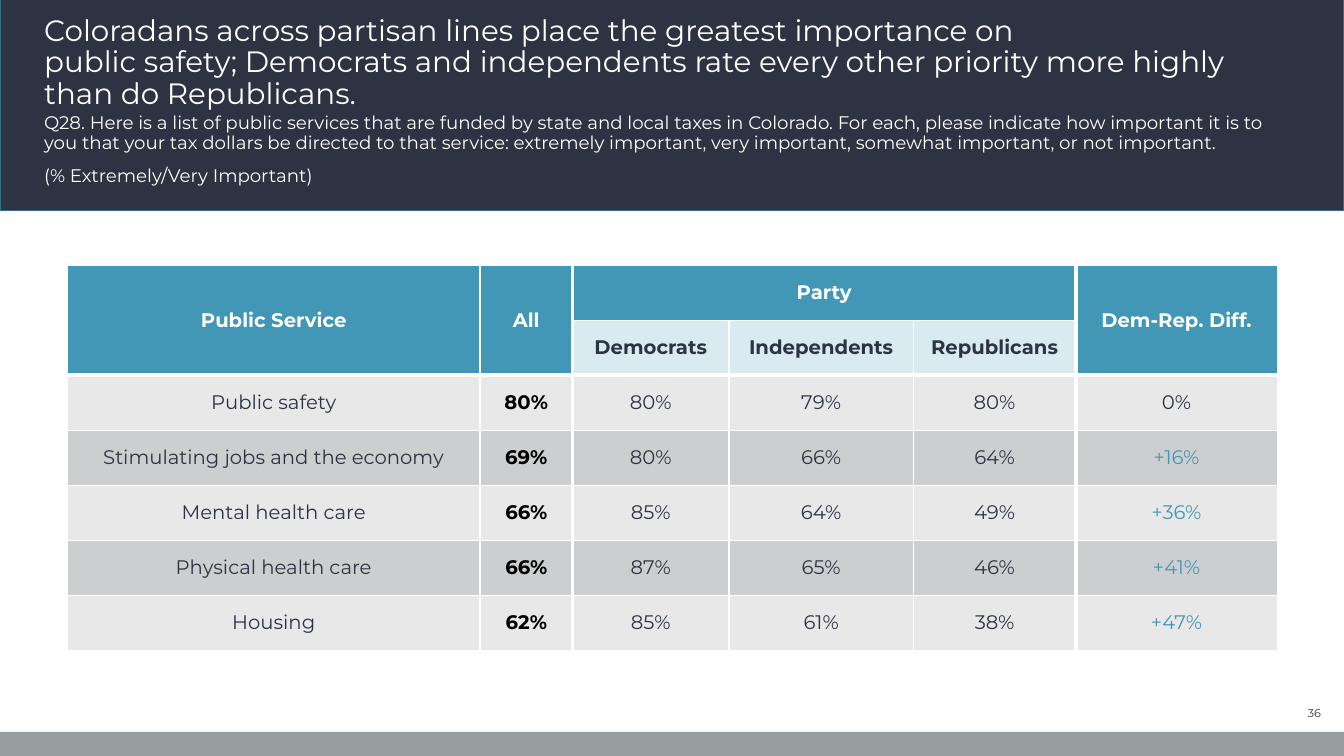
import dataclasses
import itertools

import lxml.etree
import pptx
import pptx.dml.color
import pptx.enum.shapes
import pptx.enum.text
import pptx.oxml.ns
import pptx.util

ALIGN = pptx.enum.text.PP_ALIGN
ANCHOR = pptx.enum.text.MSO_ANCHOR
FONT = "Montserrat"
HUES = {
    "navy": "2D3342", "edge": "327087", "gray": "989DA0", "white": "FFFFFF",
    "black": "000000", "teal": "4397B6", "pale": "D9EAF1",
    "light": "E8E8E9", "dark": "CDCECF",
}

deck = pptx.Presentation()
deck.slide_width = pptx.util.Inches(13.33)
deck.slide_height = pptx.util.Inches(7.5)
slide = deck.slides.add_slide(deck.slide_layouts[6])


@dataclasses.dataclass
class Area:
    """Left, top, width and height in percent of the slide."""
    left: float
    top: float
    width: float
    height: float

    def box(self) -> tuple:
        return (across(self.left), down(self.top),
                across(self.width), down(self.height))


@dataclasses.dataclass
class Band:
    area: Area
    fill: str
    edge: str = ""


@dataclasses.dataclass
class Note:
    area: Area
    paras: list
    size: float
    hue: str = "white"
    align: ALIGN = ALIGN.LEFT
    anchor: ANCHOR = ANCHOR.TOP
    gap: float = 0
    lead: float = 1.0


def across(share: float) -> int:
    return round(deck.slide_width * share / 100)


def down(share: float) -> int:
    return round(deck.slide_height * share / 100)


def tint(hue: str) -> pptx.dml.color.RGBColor:
    return pptx.dml.color.RGBColor.from_string(HUES[hue])


def add_run(para, text: str, size: float, hue: str, bold: bool = False) -> None:
    run = para.add_run()
    run.text = text
    run.font.name = FONT
    run.font.size = pptx.util.Pt(size)
    run.font.bold = bold
    run.font.color.rgb = tint(hue)


def draw_band(band: Band) -> None:
    shape = slide.shapes.add_shape(
        pptx.enum.shapes.MSO_SHAPE.RECTANGLE, *band.area.box())
    shape.shadow.inherit = False
    shape.fill.solid()
    shape.fill.fore_color.rgb = tint(band.fill)
    if band.edge:
        shape.line.color.rgb = tint(band.edge)
        shape.line.width = pptx.util.Pt(1)
    else:
        shape.line.fill.background()


def draw_note(note: Note) -> None:
    frame = slide.shapes.add_textbox(*note.area.box()).text_frame
    frame.word_wrap = True
    frame.vertical_anchor = note.anchor
    for i, lines in enumerate(note.paras):
        para = frame.add_paragraph() if i else frame.paragraphs[0]
        para.alignment = note.align
        para.line_spacing = note.lead
        para.space_before = pptx.util.Pt(note.gap if i else 0)
        for j, line in enumerate(lines):
            if j:
                para.add_line_break()
            add_run(para, line, note.size, note.hue)


def set_edge(cell, side: str, width: float) -> None:
    props = cell._tc.get_or_add_tcPr()
    qn = pptx.oxml.ns.qn
    line = lxml.etree.SubElement(
        props, qn(f"a:ln{side}"), w=str(pptx.util.Pt(width)))
    fill = lxml.etree.SubElement(line, qn("a:solidFill"))
    lxml.etree.SubElement(fill, qn("a:srgbClr"), val=HUES["white"])


# Header and footer bands
for band in (
    Band(Area(0, -0.4, 100, 28.27), "navy", "edge"),
    Band(Area(0, 96.8, 100, 3.2), "gray"),
):
    draw_band(band)

# Title, question and page number
for note in (
    Note(Area(2.55, 0.93, 94.82, 14.4), [[
        "Coloradans across partisan lines place the greatest importance on ",
        "public safety; Democrats and independents rate every other priority "
        "more highly than do Republicans."]],
        21, anchor=ANCHOR.BOTTOM, lead=0.9),
    Note(Area(2.55, 14.4, 94.82, 12.27), [
        ["Q28. Here is a list of public services that are funded by state and "
         "local taxes in Colorado. For each, please indicate how important it "
         "is to you that your tax dollars be directed to that service: "
         "extremely important, very important, somewhat important, or not "
         "important."],
        ["(% Extremely/Very Important)"]], 13, gap=10, lead=0.9),
    Note(Area(93.17, 92.67, 5.85, 3.2), [["36"]], 8, "navy",
         ALIGN.RIGHT, ANCHOR.MIDDLE),
):
    draw_note(note)

# Table of ratings by party
COLS = (30.68, 6.9, 11.63, 13.73, 12.08, 15)
ROW = 7.28
HEADS = 2
DATA = (
    ("Public Service", "All", "Party", "", "", "Dem-Rep. Diff."),
    ("", "", "Democrats", "Independents", "Republicans", ""),
    ("Public safety", "80%", "80%", "79%", "80%", "0%"),
    ("Stimulating jobs and the economy", "69%", "80%", "66%", "64%", "+16%"),
    ("Mental health care", "66%", "85%", "64%", "49%", "+36%"),
    ("Physical health care", "66%", "87%", "65%", "46%", "+41%"),
    ("Housing", "62%", "85%", "61%", "38%", "+47%"),
)
ALL, FIRST, LAST, DIFF = 1, 2, 4, 5
MERGES = (((0, 0), (1, 0)), ((0, ALL), (1, ALL)),
          ((0, FIRST), (0, LAST)), ((0, DIFF), (1, DIFF)))


def style(row: int, col: int, text: str) -> tuple:
    """Fill, text hue and weight of a cell."""
    if row < HEADS:
        sub = row == 1 and FIRST <= col <= LAST
        return ("pale", "navy", True) if sub else ("teal", "white", True)
    fill = "dark" if row % 2 else "light"
    if col == ALL:
        return fill, "black", True
    return fill, "teal" if text.startswith("+") else "navy", False


area = Area(5.03, 35.07, sum(COLS), ROW * len(DATA))
table = slide.shapes.add_table(len(DATA), len(COLS), *area.box()).table
table.first_row = table.horz_banding = False
for column, share in zip(table.columns, COLS):
    column.width = across(share)
for line in table.rows:
    line.height = down(ROW)
for start, end in MERGES:
    table.cell(*start).merge(table.cell(*end))

for row, col in itertools.product(range(len(DATA)), range(len(COLS))):
    cell, text = table.cell(row, col), DATA[row][col]
    fill, hue, bold = style(row, col, text)
    cell.vertical_anchor = ANCHOR.MIDDLE
    cell.margin_left = cell.margin_right = pptx.util.Inches(0.1)
    cell.margin_top = cell.margin_bottom = pptx.util.Inches(0.1)
    # Thick rules fence off the header rows and the party columns
    for side, thick in (("L", col in (FIRST, DIFF)), ("R", col in (ALL, LAST)),
                        ("T", row == HEADS), ("B", row == HEADS - 1)):
        set_edge(cell, side, 3 if thick else 1)
    cell.fill.solid()
    cell.fill.fore_color.rgb = tint(fill)
    if text:
        para = cell.text_frame.paragraphs[0]
        para.alignment = ALIGN.CENTER
        add_run(para, text, 14, hue, bold)

deck.save("out.pptx")
